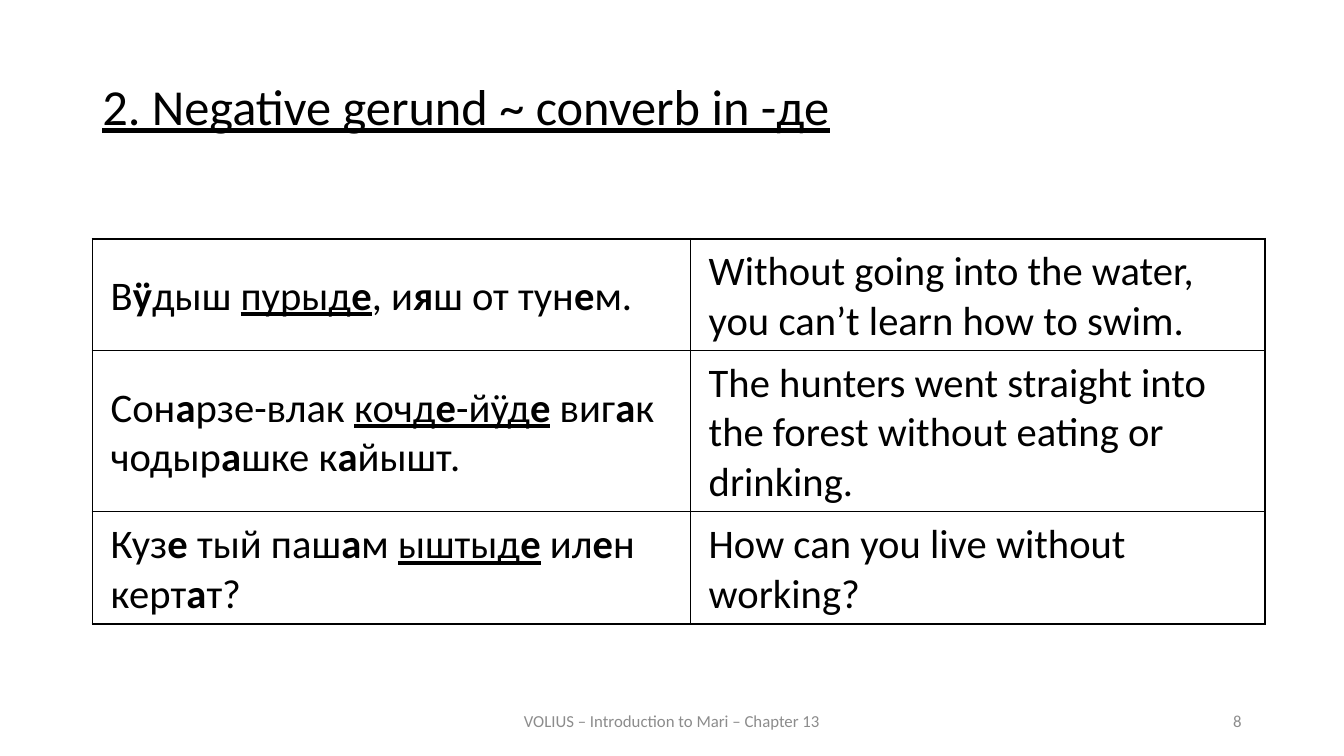
from dataclasses import dataclass
from itertools import product
from typing import NamedTuple

from lxml.etree import SubElement
from pptx import Presentation
from pptx.dml.color import RGBColor
from pptx.enum.text import MSO_VERTICAL_ANCHOR as Anchor, PP_PARAGRAPH_ALIGNMENT as Align
from pptx.oxml.ns import qn
from pptx.slide import Slide
from pptx.table import Table, _Cell as Cell
from pptx.text.text import _Paragraph as Paragraph
from pptx.util import Cm, Pt


@dataclass(frozen=True)
class Theme:
    font: str = "Calibri"
    ink: str = "000000"
    muted: str = "8C8C8C"
    title_size: float = 36
    example_size: float = 29
    footer_size: float = 12
    frame_width: float = 1.5
    rule_width: float = 1


class Box(NamedTuple):
    left: float
    top: float
    width: float
    height: float


@dataclass(frozen=True)
class Label:
    text: str
    box: Box
    size: float
    color: str
    align: Align
    anchor: Anchor = Anchor.MIDDLE
    underline: bool = False
    line_spacing: float = 1.0
    space_before: float = 0


class Example(NamedTuple):
    mari: str
    english: str
    height: float


THEME = Theme()
LABELS = (
    Label("2. Negative gerund ~ converb in -де", Box(2.33, 1.93, 29.21, 2.11),
          THEME.title_size, THEME.ink, Align.JUSTIFY, Anchor.TOP, True, 0.9, 12),
    Label("VOLIUS – Introduction to Mari – Chapter 13", Box(11.22, 17.65, 11.43, 1.01),
          THEME.footer_size, THEME.muted, Align.CENTER),
    Label("8", Box(23.92, 17.65, 7.62, 1.01), THEME.footer_size, THEME.muted, Align.RIGHT),
)
EXAMPLES = (
    Example("В*ӱ*дыш _пурыд*е*_, и*я*ш от тун*е*м.",
            "Without going into the water, you can’t learn how to swim.", 2.82),
    Example("Сон*а*рзе-влак _кочд*е*-йӱд*е*_ виг*а*к чодыр*а*шке к*а*йышт.",
            "The hunters went straight into the forest without eating or drinking.", 4.06),
    Example("Куз*е* тый паш*а*м _ыштыд*е*_ ил*е*н керт*а*т?",
            "How can you live without working?", 2.82),
)
TABLE_LEFT, TABLE_TOP = 2.33, 6.02
COLUMN_WIDTHS = (15.07, 14.48)


def style_runs(paragraph: Paragraph, size: float, color: str) -> None:
    """Give every run of a paragraph the theme font, a size and a colour."""
    for run in paragraph.runs:
        run.font.name = THEME.font
        run.font.size = Pt(size)
        run.font.color.rgb = RGBColor.from_string(color)


def add_label(slide: Slide, label: Label) -> None:
    """Draw one line of text outside the table."""
    frame = slide.shapes.add_textbox(*map(Cm, label.box)).text_frame
    frame.word_wrap = True
    frame.vertical_anchor = label.anchor
    frame.text = label.text
    paragraph = frame.paragraphs[0]
    paragraph.alignment = label.align
    paragraph.line_spacing = label.line_spacing
    paragraph.space_before = Pt(label.space_before)
    style_runs(paragraph, label.size, label.color)
    paragraph.runs[0].font.underline = label.underline


def write_marked(paragraph: Paragraph, marked: str) -> None:
    """Write text in which _ toggles underline and * toggles bold."""
    for i, phrase in enumerate(marked.split("_")):
        for j, piece in enumerate(phrase.split("*")):
            if piece:
                run = paragraph.add_run()
                run.text = piece
                run.font.underline = i % 2 == 1
                run.font.bold = j % 2 == 1
    style_runs(paragraph, THEME.example_size, THEME.ink)


def set_borders(cell: Cell, outer_sides: dict[str, bool]) -> None:
    """Rule a cell, heavier on the sides that frame the table."""
    properties = cell._tc.get_or_add_tcPr()
    for position, (side, outer) in enumerate(outer_sides.items()):
        width = THEME.frame_width if outer else THEME.rule_width
        line = SubElement(properties, qn(f"a:ln{side}"), w=str(Pt(width)))
        fill = SubElement(line, qn("a:solidFill"))
        SubElement(fill, qn("a:srgbClr"), val=THEME.ink)
        properties.insert(position, line)


def fill_cell(table: Table, row: int, column: int) -> None:
    """Write and format one cell of the example table."""
    cell = table.cell(row, column)
    cell.fill.background()
    cell.vertical_anchor = Anchor.MIDDLE
    cell.margin_left = cell.margin_right = Cm(0.46)
    cell.margin_top, cell.margin_bottom = Cm(0.08), Cm(0)
    write_marked(cell.text_frame.paragraphs[0], EXAMPLES[row][column])
    set_borders(cell, {
        "L": column == 0,
        "R": column == len(COLUMN_WIDTHS) - 1,
        "T": row == 0,
        "B": row == len(EXAMPLES) - 1,
    })


def add_examples(slide: Slide) -> None:
    """Draw the table of Mari sentences and their translations."""
    height = sum(example.height for example in EXAMPLES)
    box = Box(TABLE_LEFT, TABLE_TOP, sum(COLUMN_WIDTHS), height)
    table = slide.shapes.add_table(len(EXAMPLES), len(COLUMN_WIDTHS), *map(Cm, box)).table
    table.first_row = table.horz_banding = False
    for column, width in zip(table.columns, COLUMN_WIDTHS):
        column.width = Cm(width)
    for row, example in zip(table.rows, EXAMPLES):
        row.height = Cm(example.height)
    for row, column in product(range(len(EXAMPLES)), range(len(COLUMN_WIDTHS))):
        fill_cell(table, row, column)


def main() -> None:
    """Build the slide on the negative gerund and save it."""
    deck = Presentation()
    deck.slide_width, deck.slide_height = Cm(33.87), Cm(19.05)
    slide = deck.slides.add_slide(deck.slide_layouts[6])
    for label in LABELS:
        add_label(slide, label)
    add_examples(slide)
    deck.save("out.pptx")


if __name__ == "__main__":
    main()
